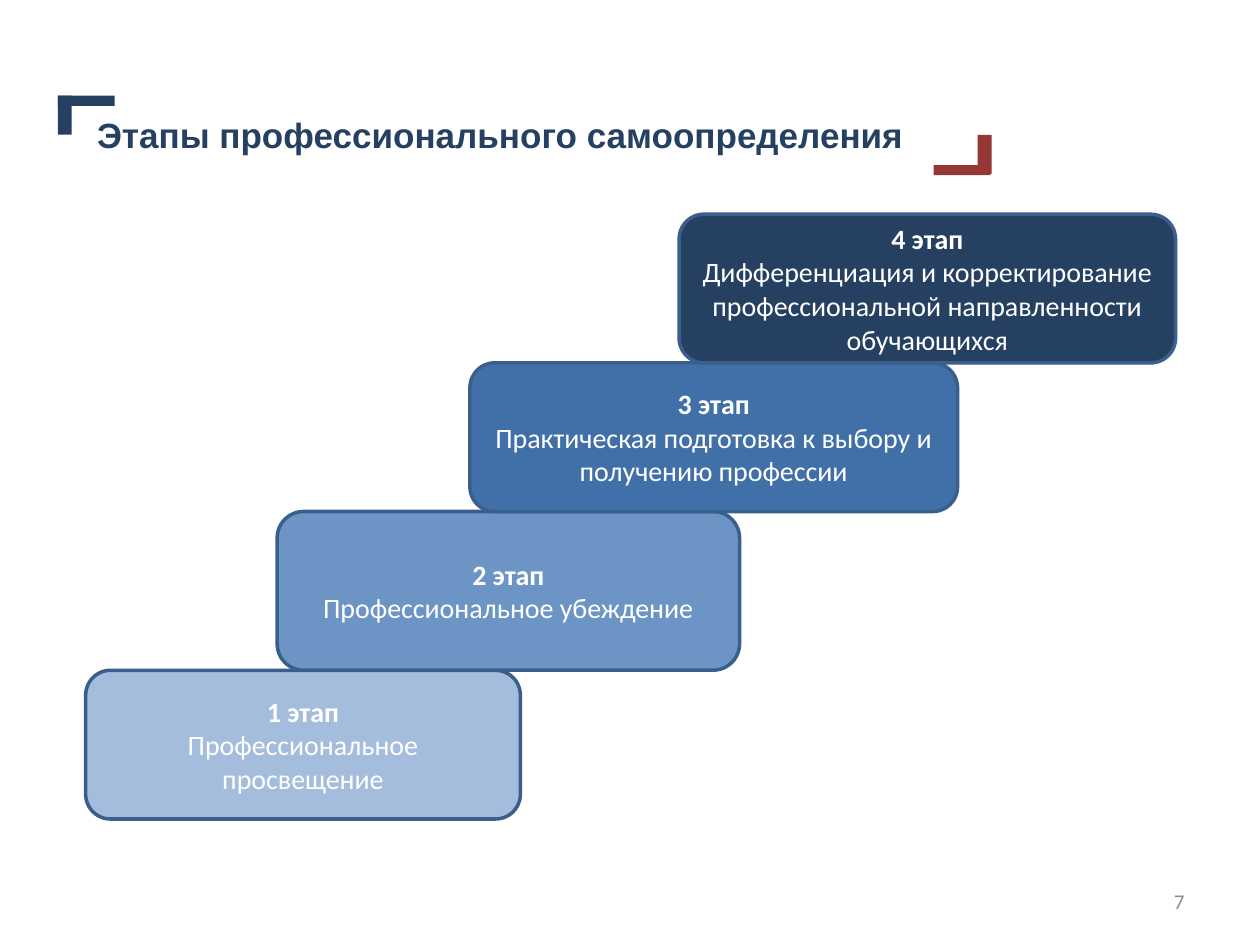
"""Build a slide with four rising steps of career choice."""
import pptx
import pptx.util
import pptx.dml.color
import pptx.enum.shapes
import pptx.enum.text

Inches = pptx.util.Inches
Kind = pptx.enum.shapes.MSO_SHAPE
Align = pptx.enum.text.PP_ALIGN
Anchor = pptx.enum.text.MSO_ANCHOR


def paint(target, color):
    target.rgb = pptx.dml.color.RGBColor.from_string(color)


def write(frame, *lines, size=16, font="Calibri", color="FFFFFF",
          bold=False, align=Align.CENTER, anchor=Anchor.MIDDLE):
    frame.word_wrap = True
    frame.auto_size = pptx.enum.text.MSO_AUTO_SIZE.NONE
    frame.vertical_anchor = anchor
    for i, line in enumerate(lines):
        para = frame.add_paragraph() if i else frame.paragraphs[0]
        para.alignment = align
        run = para.add_run()
        run.text = line
        run.font.size = pptx.util.Pt(size)
        run.font.name = font
        run.font.bold = bold and i == 0
        paint(run.font.color, color)


deck = pptx.Presentation()
deck.slide_width, deck.slide_height = Inches(10), Inches(7.5)
slide = deck.slides.add_slide(deck.slide_layouts[5])
shapes = slide.shapes

title = shapes.title
title.left, title.top = Inches(0.67), Inches(0.85)
title.width, title.height = Inches(7.79), Inches(0.44)
write(title.text_frame, "Этапы профессионального самоопределения", size=20,
      font="Arial", color="254061", bold=True, align=Align.LEFT,
      anchor=Anchor.TOP)

bars = [
    (0.46, 0.76, 0.11, 0.31, "254061"),
    (0.46, 0.76, 0.45, 0.08, "254061"),
    (7.76, 1.07, 0.11, 0.31, "953735"),
    (7.41, 1.31, 0.45, 0.08, "953735"),
]
for *box, color in bars:
    bar = shapes.add_shape(Kind.RECTANGLE, *map(Inches, box))
    bar.shadow.inherit = False
    bar.fill.solid()
    paint(bar.fill.fore_color, color)
    bar.line.fill.background()

steps = [
    (0.68, 3.45, 1.18, "A4BDDC", "Профессиональное просвещение"),
    (2.2, 3.67, 1.26, "6C95C6", "Профессиональное убеждение"),
    (3.73, 3.87, 1.18, "4170A9",
     "Практическая подготовка к выбору и получению профессии"),
    (5.39, 3.94, 1.18, "254061",
     "Дифференциация и корректирование профессиональной направленности "
     "обучающихся"),
]
base = 6.5
for num, (left, width, height, color, text) in enumerate(steps, 1):
    base -= height
    step = shapes.add_shape(Kind.ROUNDED_RECTANGLE, Inches(left),
                            Inches(base), Inches(width), Inches(height))
    step.shadow.inherit = False
    step.fill.solid()
    paint(step.fill.fore_color, color)
    paint(step.line.color, "3A5F8C")
    step.line.width = pptx.util.Pt(2)
    write(step.text_frame, f"{num} этап", text, bold=True)

page = shapes.add_textbox(Inches(7.17), Inches(6.95), Inches(2.33), Inches(0.4))
write(page.text_frame, "7", size=12, color="8C8C8C", align=Align.RIGHT)

deck.save("out.pptx")
